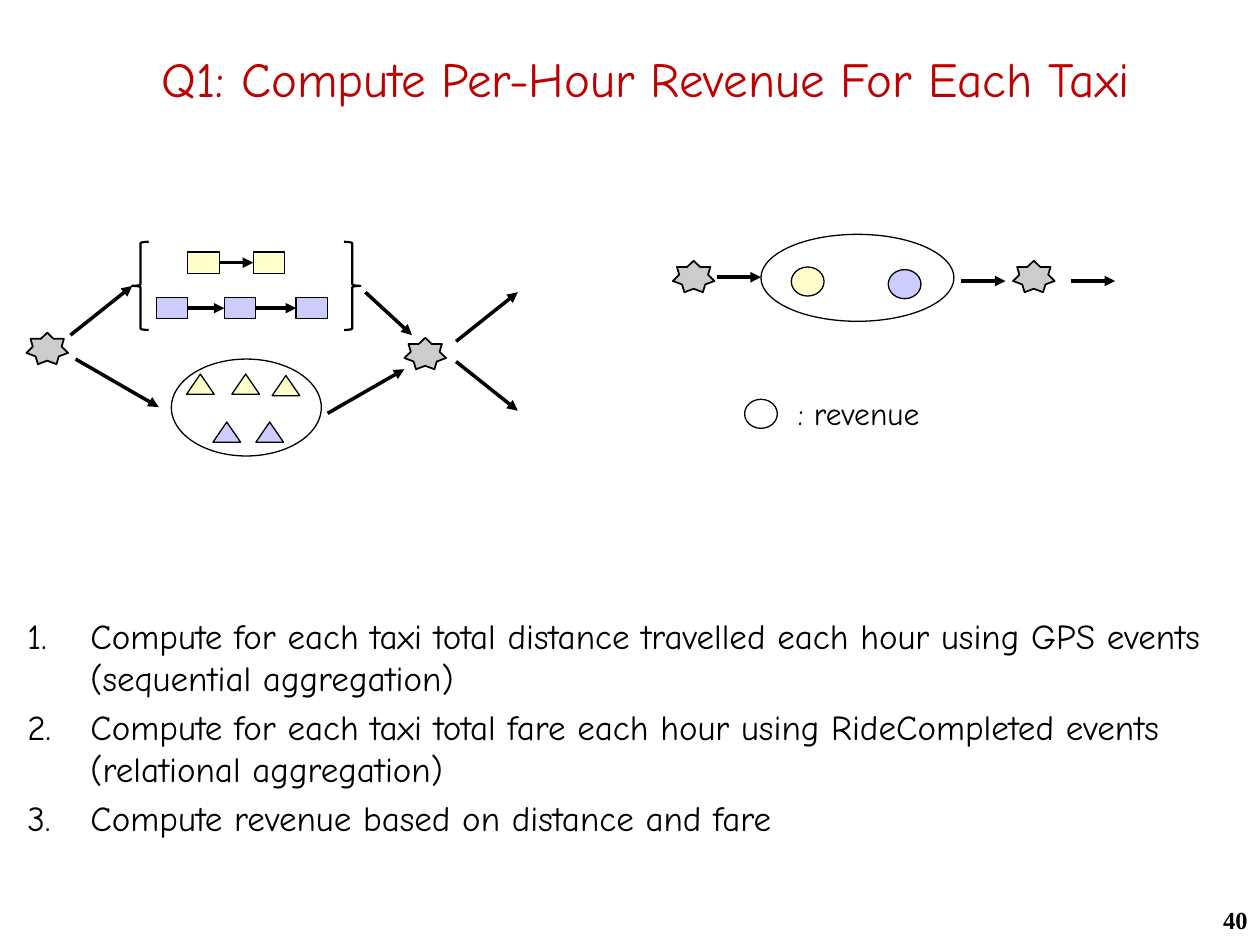
"""Build the slide on computing per-hour revenue for each taxi."""

from dataclasses import dataclass
from itertools import pairwise
from typing import Optional

from lxml.etree import SubElement
from pptx import Presentation
from pptx.dml.color import RGBColor
from pptx.enum.shapes import MSO_CONNECTOR, MSO_SHAPE
from pptx.enum.text import MSO_ANCHOR, MSO_AUTO_SIZE, PP_ALIGN
from pptx.oxml.ns import qn
from pptx.util import Pt


@dataclass(frozen=True)
class Theme:
    """Fonts, type sizes, line widths and colours of the slide."""
    body_font: str = "Comic Neue"
    number_font: str = "Times New Roman"
    title_size: float = 28
    list_size: float = 20
    legend_size: float = 18
    number_size: float = 14
    thin: float = 0.75
    star_line: float = 1
    brace_line: float = 1.25
    arrow_line: float = 2
    black: str = "000000"
    red: str = "C00000"
    yellow: str = "FFFFCC"
    lavender: str = "CCCCFF"
    grey: str = "CCCCCC"


@dataclass(frozen=True)
class Symbol:
    """A kind of event symbol with its size and outline width."""
    preset: MSO_SHAPE
    width: float
    height: float
    line: float


@dataclass(frozen=True)
class Row:
    """Equal symbols of one colour, placed at several points."""
    symbol: Symbol
    fill: Optional[str]
    points: tuple


THEME = Theme()
BOX = Symbol(MSO_SHAPE.RECTANGLE, 18, 12.2, THEME.thin)
TRIANGLE = Symbol(MSO_SHAPE.ISOSCELES_TRIANGLE, 15.8, 11.5, THEME.thin)
CIRCLE = Symbol(MSO_SHAPE.OVAL, 18.7, 16.6, THEME.thin)
STAR = Symbol(MSO_SHAPE.STAR_7_POINT, 23.8, 18, THEME.star_line)
LEFT_BRACE = Symbol(MSO_SHAPE.LEFT_BRACE, 9.4, 50.4, THEME.brace_line)
RIGHT_BRACE = Symbol(MSO_SHAPE.RIGHT_BRACE, 9.4, 50.4, THEME.brace_line)
RIDE_SET = Symbol(MSO_SHAPE.OVAL, 85.7, 55.4, THEME.thin)
REVENUE_SET = Symbol(MSO_SHAPE.OVAL, 110.2, 49.7, THEME.thin)

BOX_CHAINS = (
    Row(BOX, THEME.yellow, ((107.3, 144), (144.7, 144))),
    Row(BOX, THEME.lavender, ((89.3, 170), (128.2, 170), (169.2, 170))),
)
INPUT_ROWS = (
    Row(LEFT_BRACE, None, ((75.6, 138.2),)),
    Row(RIGHT_BRACE, None, ((196.6, 138.2),)),
    Row(RIDE_SET, None, ((97.9, 205.2),)),
    Row(TRIANGLE, THEME.lavender, ((121.7, 241.2), (146.2, 241.2))),
    Row(TRIANGLE, THEME.yellow, ((106.6, 213.8), (132.5, 213.8), (155.5, 214.6))),
    Row(STAR, THEME.grey, ((15.1, 190.1), (231.1, 193))),
)
INPUT_ARROWS = (
    (40.3, 191.5, 75.6, 163.4),
    (43.2, 205.2, 90.7, 232.6),
    (187.2, 236.2, 231.1, 211),
    (208.8, 167, 235.4, 191.5),
    (260.6, 195.1, 295.9, 167),
    (260.6, 206.6, 295.9, 234.7),
)
OUTPUT_ROWS = (
    Row(STAR, THEME.grey, ((384.5, 149), (578.9, 149))),
    Row(CIRCLE, None, ((425.5, 228.2),)),
    Row(REVENUE_SET, None, ((434.9, 133.9),)),
    Row(CIRCLE, THEME.yellow, ((452.2, 152.6),)),
    Row(CIRCLE, THEME.lavender, ((507.6, 154.1),)),
)
OUTPUT_ARROWS = tuple(
    (left, top, left + 25.2, top)
    for left, top in ((409.7, 158.4), (549.4, 160.6), (612, 160.6))
)
STEPS = (
    "Compute for each taxi total distance travelled each hour using GPS events (sequential aggregation)",
    "Compute for each taxi total fare each hour using RideCompleted events (relational aggregation)",
    "Compute revenue based on distance and fare",
)


def draw_row(shapes, row: Row) -> list:
    """Draw the symbols of a row and return them."""
    symbol, drawn = row.symbol, []
    for left, top in row.points:
        shape = shapes.add_shape(
            symbol.preset, Pt(left), Pt(top), Pt(symbol.width), Pt(symbol.height))
        shape.shadow.inherit = False
        if row.fill:
            shape.fill.solid()
            shape.fill.fore_color.rgb = RGBColor.from_string(row.fill)
        else:
            shape.fill.background()
        shape.line.color.rgb = RGBColor.from_string(THEME.black)
        shape.line.width = Pt(symbol.line)
        drawn.append(shape)
    return drawn


def draw_arrow(shapes, ends: tuple = (0, 0, 0, 0)):
    """Draw a straight arrow between two points and return it."""
    arrow = shapes.add_connector(MSO_CONNECTOR.STRAIGHT, *(Pt(end) for end in ends))
    arrow.line.color.rgb = RGBColor.from_string(THEME.black)
    arrow.line.width = Pt(THEME.arrow_line)
    SubElement(arrow.line._get_or_add_ln(), qn("a:tailEnd"), type="triangle")
    SubElement(arrow._element.spPr, qn("a:effectLst"))
    return arrow


def draw_chain(shapes, row: Row) -> None:
    """Draw a row of boxes joined by arrows from side to side."""
    for source, target in pairwise(draw_row(shapes, row)):
        arrow = draw_arrow(shapes)
        arrow.begin_connect(source, 3)
        arrow.end_connect(target, 1)


def draw_diagram(shapes, rows: tuple, arrows: tuple) -> None:
    """Draw the symbols and free arrows of one diagram."""
    for row in rows:
        draw_row(shapes, row)
    for ends in arrows:
        draw_arrow(shapes, ends)


def format_text(text_frame, size: float, font: str = THEME.body_font,
                color: str = THEME.black, bold: bool = False,
                alignment: PP_ALIGN = PP_ALIGN.LEFT) -> None:
    """Give all paragraphs and runs of a frame one format."""
    for paragraph in text_frame.paragraphs:
        paragraph.alignment = alignment
        for run in paragraph.runs:
            run.font.name = font
            run.font.size = Pt(size)
            run.font.bold = bold
            run.font.color.rgb = RGBColor.from_string(color)


def add_text(shapes, text: str, bounds: tuple, wrap: bool = True):
    """Add a text box and return its frame."""
    text_frame = shapes.add_textbox(*(Pt(length) for length in bounds)).text_frame
    text_frame.word_wrap = wrap
    text_frame.text = text
    return text_frame


def add_title(slide, text: str) -> None:
    """Place and format the title."""
    title = slide.shapes.title
    title.left, title.top, title.width, title.height = Pt(18), Pt(23.8), Pt(702), Pt(41.8)
    title.text_frame.text = text
    title.text_frame.vertical_anchor = MSO_ANCHOR.MIDDLE
    format_text(title.text_frame, THEME.title_size, color=THEME.red,
                alignment=PP_ALIGN.CENTER)


def add_steps(slide) -> None:
    """Add the numbered list of steps."""
    text_frame = add_text(slide.shapes, "\n".join(STEPS), (8.6, 347.8, 714.2, 118.1))
    format_text(text_frame, THEME.list_size)
    for paragraph in text_frame.paragraphs:
        paragraph.space_before = Pt(THEME.list_size * 0.2)
        properties = paragraph._p.get_or_add_pPr()
        properties.set("marL", str(Pt(36)))
        properties.set("indent", str(-Pt(36)))
        SubElement(properties, qn("a:buAutoNum"), type="arabicPeriod")


def main() -> None:
    """Build and save the presentation."""
    presentation = Presentation()
    presentation.slide_width, presentation.slide_height = Pt(720), Pt(540)
    slide = presentation.slides.add_slide(presentation.slide_layouts[5])
    add_title(slide, "Q1: Compute Per-Hour Revenue For Each Taxi")
    number = add_text(slide.shapes, "40", (684, 513.4, 36, 26.6))
    format_text(number, THEME.number_size, THEME.number_font, bold=True,
                alignment=PP_ALIGN.RIGHT)
    add_steps(slide)
    inputs = slide.shapes.add_group_shape().shapes
    for chain in BOX_CHAINS:
        draw_chain(inputs, chain)
    draw_diagram(inputs, INPUT_ROWS, INPUT_ARROWS)
    outputs = slide.shapes.add_group_shape().shapes
    legend = add_text(outputs, " : revenue", (442.8, 221.8, 103, 28.8), wrap=False)
    legend.auto_size = MSO_AUTO_SIZE.SHAPE_TO_FIT_TEXT
    format_text(legend, THEME.legend_size)
    draw_diagram(outputs, OUTPUT_ROWS, OUTPUT_ARROWS)
    presentation.save("out.pptx")


if __name__ == "__main__":
    main()
